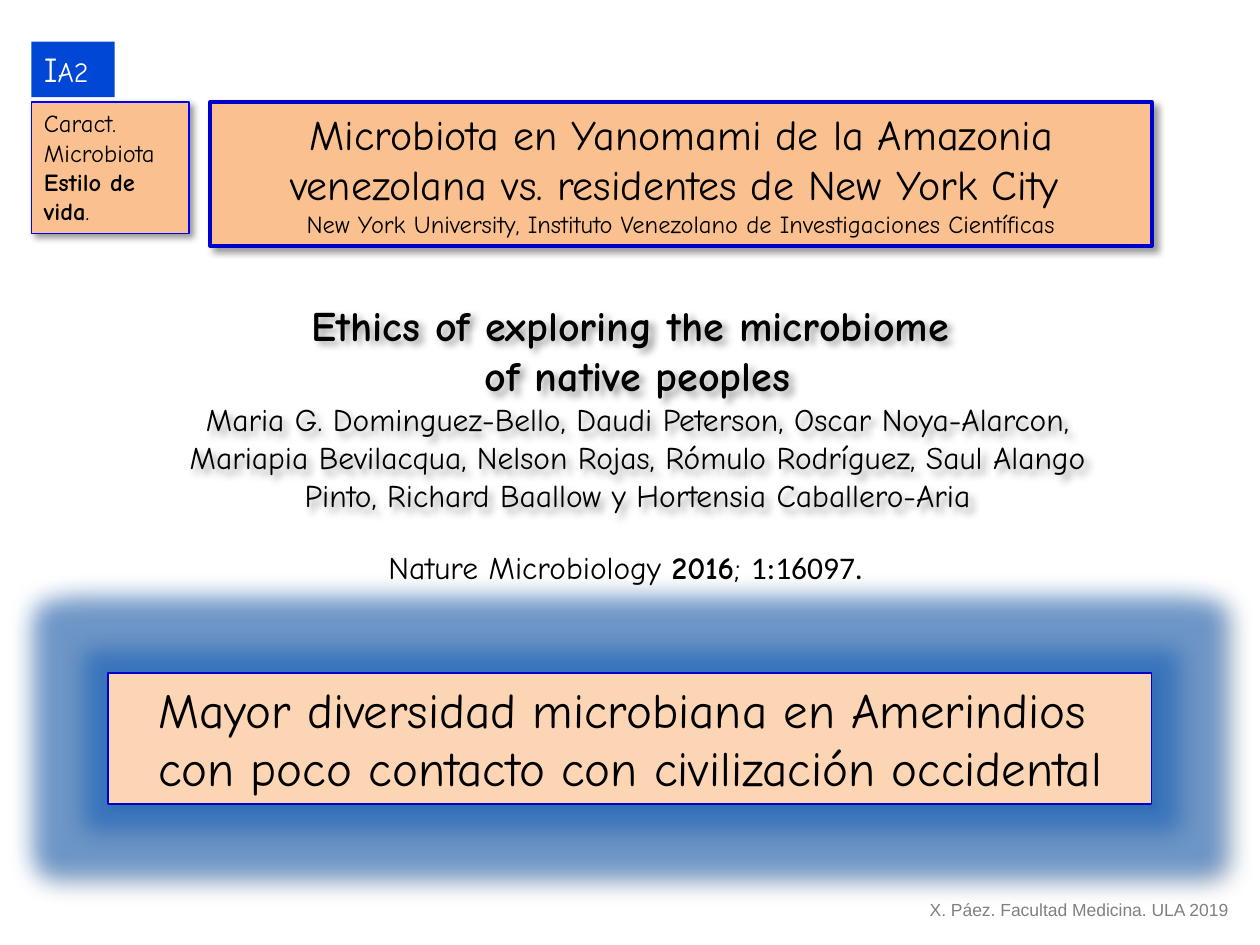
import pptx
import pptx.dml.color
import pptx.enum.shapes
import pptx.enum.text
import pptx.oxml
import pptx.oxml.ns
import pptx.util

WIDE, HIGH = 10, 7.5
ALIGN = pptx.enum.text.PP_ALIGN
SHADE = ('<a:outerShdw {} blurRad="50800" dist="38100" dir="2700000" algn="tl" '
         'rotWithShape="0"><a:srgbClr val="000000"><a:alpha val="40000"/>'
         '</a:srgbClr></a:outerShdw>')
GLOW = ('<a:glow {} rad="355600"><a:srgbClr val="0F5FC0">'
        '<a:alpha val="50000"/></a:srgbClr></a:glow>')


def tint(code):
    return pptx.dml.color.RGBColor.from_string(code)


def place(*shares):
    sides = (WIDE, HIGH, WIDE, HIGH)
    return [pptx.util.Inches(part * side) for part, side in zip(shares, sides)]


def glaze(shape, *marks):
    shape.shadow.inherit = False
    effects = shape._element.spPr.find(pptx.oxml.ns.qn("a:effectLst"))
    space = pptx.oxml.ns.nsdecls("a")
    for mark in marks:
        effects.append(pptx.oxml.parse_xml(mark.format(space)))


def write(shape, lines, base, align=ALIGN.CENTER, wrap=True):
    frame = shape.text_frame
    look = {"word_wrap": wrap,
            "vertical_anchor": pptx.enum.text.MSO_ANCHOR.TOP,
            "auto_size": pptx.enum.text.MSO_AUTO_SIZE.SHAPE_TO_FIT_TEXT}
    for name, value in look.items():
        setattr(frame, name, value)
    for spot, line in enumerate(lines):
        para = frame.add_paragraph() if spot else frame.paragraphs[0]
        para.alignment = align
        for text, extra in line:
            run = para.add_run()
            run.text = text
            style = {"name": "Comic Neue", "color": "000000", **base, **extra}
            run.font.color.rgb = tint(style.pop("color"))
            style["size"] = pptx.util.Pt(style["size"])
            for name, value in style.items():
                setattr(run.font, name, value)


def label(slide, spot, lines, base, marks=(), **rest):
    shape = slide.shapes.add_textbox(*place(*spot))
    if marks:
        glaze(shape, *marks)
    write(shape, lines, base, **rest)


def panel(slide, spot, fill, edge, lines, base, marks=(SHADE,), **rest):
    kind = pptx.enum.shapes.MSO_SHAPE.RECTANGLE
    shape = slide.shapes.add_shape(kind, *place(*spot))
    shape.fill.solid()
    shape.fill.fore_color.rgb = tint(fill)
    if edge:
        shape.line.color.rgb = tint(edge[0])
        shape.line.width = pptx.util.Pt(edge[1])
    else:
        shape.line.fill.background()
    glaze(shape, *marks)
    write(shape, lines, base, **rest)


def main():
    deck = pptx.Presentation()
    deck.slide_width = pptx.util.Inches(WIDE)
    deck.slide_height = pptx.util.Inches(HIGH)
    slide = deck.slides.add_slide(deck.slide_layouts[6])

    bold = {"bold": True}
    label(slide, (.112, .31, .788, .243),
          [[("Ethics of exploring the microbiome ", bold)],
           [("of native peoples", bold)],
           [("Maria G. Dominguez-Bello, Daudi Peterson, Oscar Noya-Alarcon, "
             "Mariapia Bevilacqua, Nelson Rojas, Rómulo Rodríguez, Saul Alango "
             "Pinto, Richard Baallow y Hortensia Caballero-Aria", {"size": 18})]],
          {"size": 24}, marks=(SHADE,))
    label(slide, (.233, .573, .533, .053),
          [[("Nature Microbiology ", {}), ("2016", bold), ("; ", {}),
            ("1:16097. ", {"name": "Calibri"})]], {"size": 18})
    label(slide, (.728, .945, .259, .036),
          [[("X. Páez. Facultad Medicina. ULA 2019", {})]],
          {"size": 10, "name": "Arial", "color": "808080"},
          align=ALIGN.LEFT, wrap=False)

    panel(slide, (.167, .108, .747, .152), "FAC090", ("0000CC", 2.25),
          [[("Microbiota en Yanomami de la Amazonia venezolana vs. "
             "residentes de New York City ", {})],
           [("New York University, Instituto Venezolano de Investigaciones "
             "Científicas", {"size": 14})]], {"size": 24})
    panel(slide, (.086, .712, .828, .139), "FCD5B5", ("0000CC", 1),
          [[("Mayor diversidad microbiana en Amerindios ", {})],
           [("con poco contacto con civilización occidental", {})]],
          {"size": 28}, marks=(GLOW, SHADE), wrap=False)
    panel(slide, (.025, .044, .066, .059), "0047D6", None,
          [[("I", {}), ("A2", {"size": 16})]],
          {"size": 20, "color": "FFFFFF"}, marks=(),
          align=ALIGN.LEFT, wrap=False)
    panel(slide, (.025, .108, .125, .139), "FAC090", ("0000FF", .75),
          [[("Caract.", {})], [("Microbiota", {})],
           [("Estilo de vida", bold), (".", {})]],
          {"size": 14}, align=ALIGN.LEFT)
    deck.save("out.pptx")


if __name__ == "__main__":
    main()
